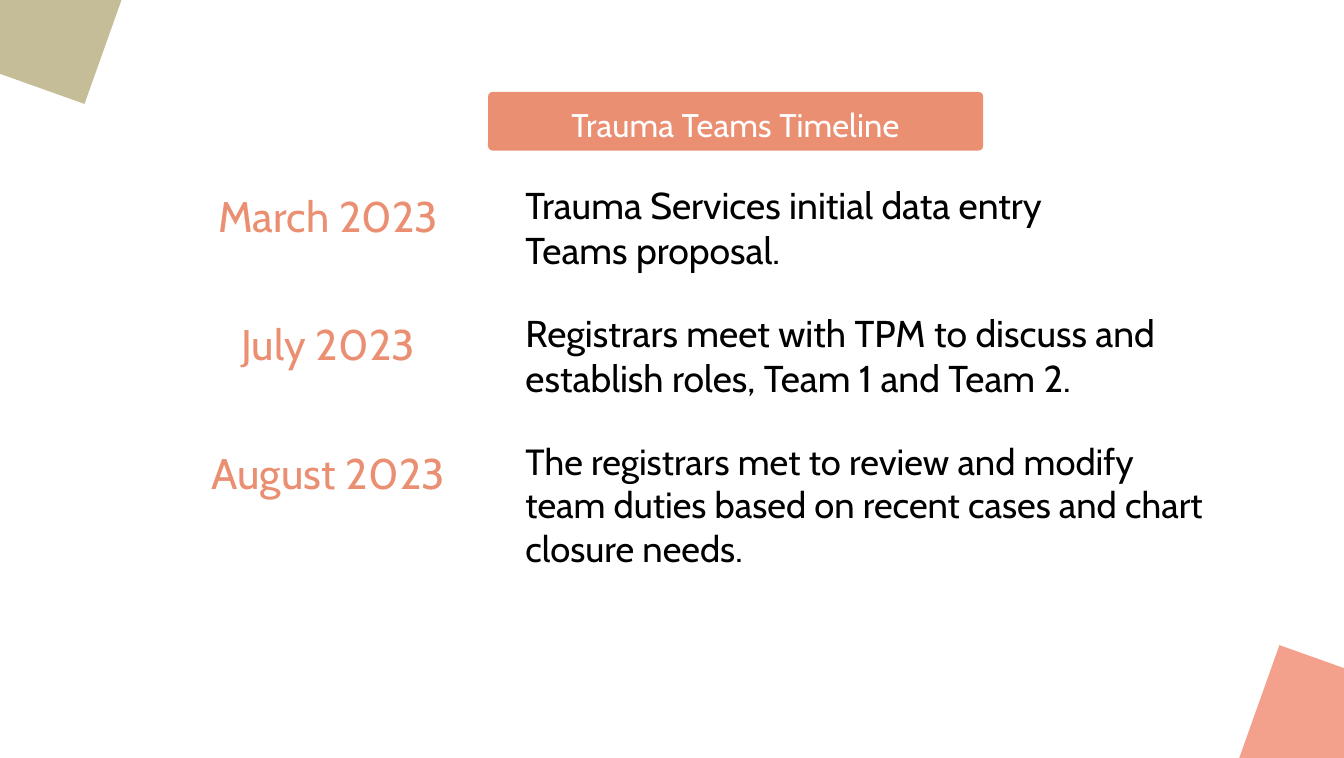
import pptx
import pptx.util
import pptx.dml.color
import pptx.enum.shapes
import pptx.enum.text
from dataclasses import dataclass

Inches = pptx.util.Inches
Pt = pptx.util.Pt
Shape = pptx.enum.shapes.MSO_SHAPE
Align = pptx.enum.text.PP_ALIGN
Anchor = pptx.enum.text.MSO_ANCHOR


@dataclass(frozen=True)
class Theme:
    font: str = "Cabin"
    coral: str = "EA8F72"
    salmon: str = "F3A08D"
    khaki: str = "C4BD97"
    white: str = "FFFFFF"
    black: str = "000000"
    title: float = 23.3
    date: float = 30.5
    body: float = 26.6
    body_long: float = 25.9


THEME = Theme()

# Date, description, description width and height, description size
EVENTS = [
    ("March 2023", "Trauma Services initial data entry Teams proposal.",
     5.32, 0.9, THEME.body),
    ("July 2023", "Registrars meet with TPM to discuss and establish roles, "
     "Team 1 and Team 2.", 6.69, 0.9, THEME.body),
    ("August 2023", "The registrars met to review and modify team duties "
     "based on recent cases and chart closure needs.",
     6.86, 1.31, THEME.body_long),
]
FIRST_ROW, ROW_PITCH = 1.8, 1.27
DATE_LEFT, DATE_WIDTH, TEXT_LEFT = 1.25, 4, 5.2


def rgb(color):
    return pptx.dml.color.RGBColor.from_string(color)


def add_block(s, kind, left, top, width, height, color, rotation=0):
    sp = s.shapes.add_shape(kind, Inches(left), Inches(top),
                            Inches(width), Inches(height))
    sp.shadow.inherit = False
    sp.fill.solid()
    sp.fill.fore_color.rgb = rgb(color)
    sp.line.fill.background()
    sp.rotation = rotation
    return sp


def set_text(sp, text, size, color, align=Align.LEFT, anchor=Anchor.TOP,
             line=None, tracking=0, inset=0):
    tf = sp.text_frame
    tf.word_wrap = True
    tf.vertical_anchor = anchor
    tf.margin_left = tf.margin_right = Inches(inset)
    tf.margin_top = tf.margin_bottom = Inches(inset)
    p = tf.paragraphs[0]
    p.alignment = align
    if line:
        p.line_spacing = Pt(line)
    r = p.add_run()
    r.text = text
    r.font.name = THEME.font
    r.font.size = Pt(size)
    r.font.color.rgb = rgb(color)
    if tracking:  # hundredths of a point
        r._r.get_or_add_rPr().set("spc", str(tracking))


def add_text(s, left, top, width, height, *args, **kwargs):
    sp = s.shapes.add_textbox(Inches(left), Inches(top),
                              Inches(width), Inches(height))
    set_text(sp, *args, **kwargs)


def add_event(s, row, date, text, width, height, size):
    top = FIRST_ROW + row * ROW_PITCH
    add_text(s, DATE_LEFT, top, DATE_WIDTH, 0.55, date, THEME.date,
             THEME.coral, align=Align.CENTER, line=42, tracking=10)
    add_text(s, TEXT_LEFT, top, width, height, text, size, THEME.black)


def main():
    prs = pptx.Presentation()
    prs.slide_width, prs.slide_height = Inches(13.3), Inches(7.5)
    s = prs.slides.add_slide(prs.slide_layouts[6])

    # Title banner
    banner = add_block(s, Shape.ROUNDED_RECTANGLE, 4.83, 0.91, 4.9, 0.58,
                       THEME.coral)
    banner.adjustments[0] = 0.08
    set_text(banner, "Trauma Teams Timeline", THEME.title, THEME.white,
             align=Align.CENTER, anchor=Anchor.MIDDLE, line=32.1,
             tracking=10, inset=0.04)

    # Timeline rows
    for row, event in enumerate(EVENTS):
        add_event(s, row, *event)

    # Tilted corner blocks
    add_block(s, Shape.RECTANGLE, -2.57, -3.8, 4.24, 4.24, THEME.khaki, 19.6)
    add_block(s, Shape.RECTANGLE, 11.91, 6.82, 3.28, 3.91, THEME.salmon, 19.6)

    prs.save("out.pptx")


if __name__ == "__main__":
    main()
